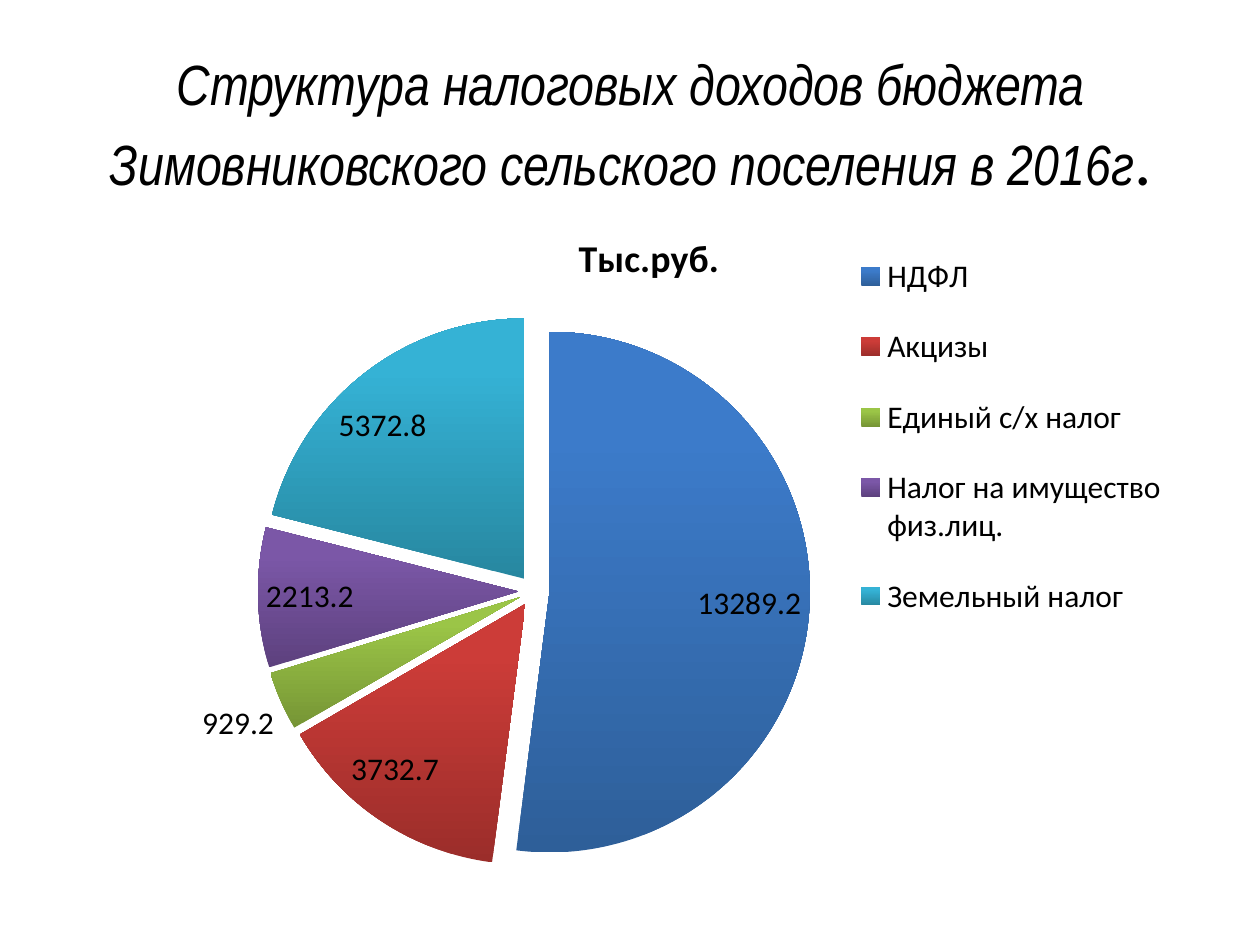
from lxml import etree
from pptx import Presentation
from pptx import util as u
from pptx.chart.data import CategoryChartData
from pptx.dml.color import RGBColor
from pptx.enum import chart as charts, text
from pptx.oxml.ns import qn

PX = 914400 / 126  # EMU in one px
BLACK = RGBColor(0, 0, 0)
WHITE = RGBColor(255, 255, 255)
# Each category: name, value, dark (bottom) and light (top) gradient colours
TAXES = [
    ("НДФЛ", 13289.2, RGBColor(0x2E, 0x5F, 0x99), RGBColor(0x3C, 0x7B, 0xCA)),
    ("Акцизы", 3732.7, RGBColor(0x9B, 0x2D, 0x2A), RGBColor(0xCC, 0x3C, 0x38)),
    ("Единый с/х налог", 929.2, RGBColor(0x76, 0x95, 0x35), RGBColor(0x9B, 0xC5, 0x47)),
    ("Налог на имущество физ.лиц.", 2213.2, RGBColor(0x5D, 0x41, 0x7E), RGBColor(0x7B, 0x57, 0xA7)),
    ("Земельный налог", 5372.8, RGBColor(0x27, 0x87, 0xA0), RGBColor(0x35, 0xB2, 0xD5)),
]


def emu(*lengths):
    return [u.Emu(round(length * PX)) for length in lengths]


def format_font(font, **values):
    for name, value in values.items():
        setattr(font, name, value)
    font.color.rgb = BLACK


def set_layout(element, before, box, inner=False):
    """Place a chart part at box, given as fractions of the chart."""
    for old in element.findall(qn("c:layout")):
        element.remove(old)
    layout = etree.Element(qn("c:layout"))
    manual = etree.SubElement(layout, qn("c:manualLayout"))
    values = {"layoutTarget": "inner"} if inner else {}
    values |= {"xMode": "edge", "yMode": "edge"}
    values |= dict(zip("xywh", box))
    for name, value in values.items():
        etree.SubElement(manual, qn(f"c:{name}")).set("val", str(value))
    element.find(qn(before)).addprevious(layout)


def add_title(slide, left, top, width, height):
    frame = slide.shapes.add_textbox(*emu(left, top, width, height)).text_frame
    frame.word_wrap = True
    frame.vertical_anchor = text.MSO_ANCHOR.MIDDLE
    paragraph = frame.paragraphs[0]
    paragraph.alignment = text.PP_ALIGN.CENTER
    for words, name, size, italic in (
        ("Структура налоговых доходов бюджета Зимовниковского сельского поселения в 2016г",
         "Arial Narrow", 32.4, True),
        (".", "Calibri", 39.6, False),
    ):
        run = paragraph.add_run()
        run.text = words
        format_font(run.font, name=name, size=u.Pt(size), italic=italic)


def add_tax_pie(slide, left, top, width, height):
    data = CategoryChartData()
    data.categories = [tax[0] for tax in TAXES]
    data.add_series("Тыс.руб.", [tax[1] for tax in TAXES])
    chart = slide.shapes.add_chart(
        charts.XL_CHART_TYPE.PIE, *emu(left, top, width, height), data).chart
    format_font(chart.font, name="Calibri", size=u.Pt(18))

    # Chart title
    chart.has_title = True
    frame = chart.chart_title.text_frame
    frame.text = "Тыс.руб."
    format_font(frame.paragraphs[0].runs[0].font,
                name="Calibri", size=u.Pt(21.6), bold=True)

    # Legend
    chart.has_legend = True
    chart.legend.position = charts.XL_LEGEND_POSITION.RIGHT
    chart.legend.include_in_layout = False
    format_font(chart.legend.font, name="Calibri", size=u.Pt(18))

    # Slices
    plot = chart.plots[0]
    plot.vary_by_categories = True
    series = plot.series[0]
    for index, (_, _, dark, light) in enumerate(TAXES):
        fill = series.points[index].format.fill
        fill.gradient()
        fill.gradient_angle = 90
        for stop, colour, position in zip(fill.gradient_stops, (dark, light), (0, 0.8)):
            stop.color.rgb = colour
            stop.position = position
    explosion = etree.Element(qn("c:explosion"))
    explosion.set("val", "6")
    series._element.find(qn("c:dPt")).addprevious(explosion)

    # Value labels
    plot.has_data_labels = True
    labels = plot.data_labels
    for name, value in {
        "show_value": True, "show_percentage": False,
        "number_format": "General", "number_format_is_linked": False,
        "position": charts.XL_LABEL_POSITION.BEST_FIT,
    }.items():
        setattr(labels, name, value)
    format_font(labels.font, name="Calibri", size=u.Pt(18))

    # Positions of pie and legend
    set_layout(chart._chartSpace.chart.plotArea, "c:pieChart",
               (0.16, 0.15, 0.48, 0.8), inner=True)
    set_layout(chart.legend._element, "c:overlay", (0.66, 0.03, 0.31, 0.6))


def main():
    presentation = Presentation()
    presentation.slide_width, presentation.slide_height = emu(1260, 945)
    slide = presentation.slides.add_slide(presentation.slide_layouts[6])
    slide.background.fill.solid()
    slide.background.fill.fore_color.rgb = WHITE
    add_title(slide, 64, 45, 1134, 158)
    add_tax_pie(slide, 74, 204, 1150, 704)
    presentation.save("out.pptx")


if __name__ == "__main__":
    main()
